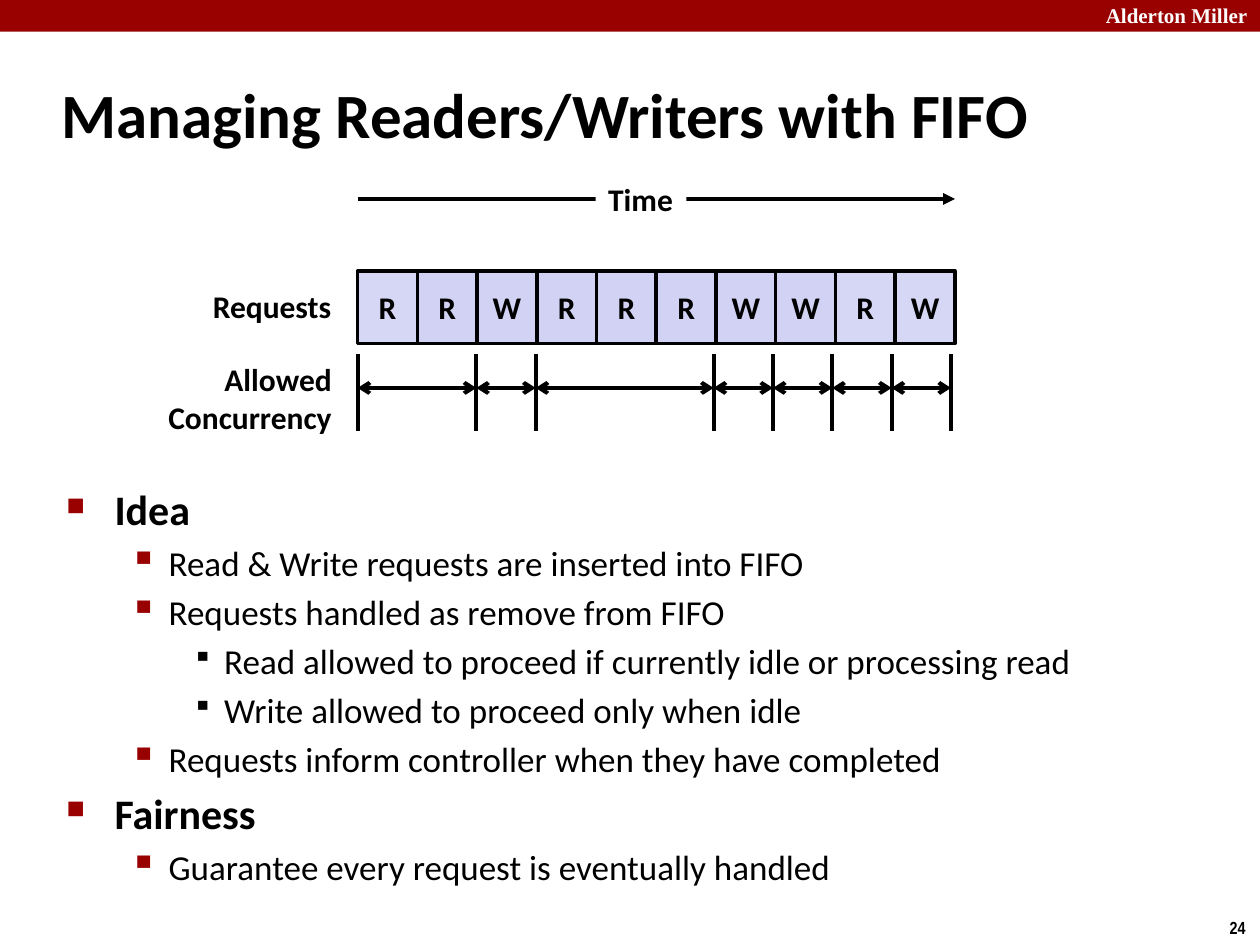
"""Build the slide on managing readers and writers with a FIFO queue."""
from lxml.etree import SubElement
from pptx import Presentation
from pptx.dml.color import RGBColor
from pptx.enum.shapes import MSO_CONNECTOR, MSO_SHAPE
from pptx.enum.text import MSO_ANCHOR, PP_ALIGN
from pptx.oxml.ns import qn
from pptx.util import Cm, Pt

BLACK = RGBColor(0x00, 0x00, 0x00)
WHITE = RGBColor(0xFF, 0xFF, 0xFF)
DARK_RED = RGBColor(0x99, 0x00, 0x00)
LAVENDER = RGBColor(0xD2, 0xD2, 0xF4)
PALE_LAVENDER = RGBColor(0xD6, 0xD6, 0xF5)

HEADER = "Alderton Miller"
TITLE = "Managing Readers/Writers with FIFO"
PAGE_NUMBER = "24"
REQUESTS = "RRWRRRWWRW"
PALE_REQUESTS = (0, 8, 9)
BODY = [
    (0, "Idea"),
    (1, "Read & Write requests are inserted into FIFO"),
    (1, "Requests handled as remove from FIFO"),
    (2, "Read allowed to proceed if currently idle or processing read"),
    (2, "Write allowed to proceed only when idle"),
    (1, "Requests inform controller when they have completed"),
    (0, "Fairness"),
    (1, "Guarantee every request is eventually handled"),
]
LEVELS = [
    dict(margin=0.97, hanging=0.97, size=24, bold=True, bullet="■", percent=60, color=DARK_RED),
    dict(margin=2.06, hanging=0.79, size=20, bold=False, bullet="▪", percent=110, color=DARK_RED),
    dict(margin=3.18, hanging=0.64, size=20, bold=False, bullet="▪", percent=80, color=BLACK),
]

ROW_LEFT, ROW_TOP, ROW_WIDTH, ROW_HEIGHT = 7.21, 5.46, 12.04, 1.47
TIME_Y = 4.01
SPAN_WIDTH, TICK_TOP, TICK_BOTTOM, SPAN_Y = 11.96, 7.14, 8.69, 7.82


def add_run(paragraph, text, size, bold=True, color=BLACK, font="Calibri"):
    run = paragraph.add_run()
    run.text = text
    run.font.name = font
    run.font.size = Pt(size)
    run.font.bold = bold
    run.font.color.rgb = color


def add_text(slide, box, lines, size, align=PP_ALIGN.LEFT, wrap=False, **style):
    shape = slide.shapes.add_textbox(*map(Cm, box))
    frame = shape.text_frame
    frame.word_wrap = wrap
    for index, line in enumerate(lines):
        paragraph = frame.add_paragraph() if index else frame.paragraphs[0]
        paragraph.alignment = align
        add_run(paragraph, line, size, **style)
    return shape


def add_rectangle(slide, box, fill, outline=None):
    shape = slide.shapes.add_shape(MSO_SHAPE.RECTANGLE, *map(Cm, box))
    shape.shadow.inherit = False
    shape.fill.solid()
    shape.fill.fore_color.rgb = fill
    if outline is None:
        shape.line.fill.background()
    else:
        shape.line.color.rgb = outline
        shape.line.width = Pt(2)
    return shape


def add_line(slide, start, end, head=None, tail=None):
    connector = slide.shapes.add_connector(MSO_CONNECTOR.STRAIGHT, *map(Cm, (*start, *end)))
    connector.line.color.rgb = BLACK
    connector.line.width = Pt(2.25)
    line = connector.line._get_or_add_ln()
    for tag, kind in (("a:headEnd", head), ("a:tailEnd", tail)):
        if kind:
            SubElement(line, qn(tag), type=kind)
    SubElement(connector._element.spPr, qn("a:effectLst"))


def add_frame(slide):
    add_rectangle(slide, (0, 0, 25.4, 0.64), DARK_RED)
    add_text(slide, (21.8, -0.08, 3.6, 0.76), [HEADER], 12, PP_ALIGN.RIGHT,
             color=WHITE, font="Times New Roman")
    add_text(slide, (24.54, 18.36, 0.86, 0.69), [PAGE_NUMBER], 10, font="Arial Narrow")
    title = add_text(slide, (0.99, 1.22, 21.08, 2.11), [TITLE], 36, wrap=True)
    title.text_frame.vertical_anchor = MSO_ANCHOR.MIDDLE


def add_body(slide):
    frame = slide.shapes.add_textbox(Cm(1.09), Cm(9.63), Cm(21.95), Cm(7.77)).text_frame
    frame.word_wrap = True
    for index, (depth, text) in enumerate(BODY):
        level = LEVELS[depth]
        paragraph = frame.add_paragraph() if index else frame.paragraphs[0]
        paragraph.level = depth
        paragraph.space_before = Pt(level["size"] * 0.2)
        properties = paragraph._p.get_or_add_pPr()
        properties.set("marL", str(Cm(level["margin"])))
        properties.set("indent", str(-Cm(level["hanging"])))
        bullet_color = SubElement(properties, qn("a:buClr"))
        SubElement(bullet_color, qn("a:srgbClr"), val=str(level["color"]))
        SubElement(properties, qn("a:buSzPct"), val=str(level["percent"] * 1000))
        SubElement(properties, qn("a:buChar"), char=level["bullet"])
        add_run(paragraph, text, level["size"], level["bold"])


def add_requests(slide):
    width = ROW_WIDTH / len(REQUESTS)
    for index, request in enumerate(REQUESTS):
        fill = PALE_LAVENDER if index in PALE_REQUESTS else LAVENDER
        box = (ROW_LEFT + index * width, ROW_TOP, width, ROW_HEIGHT)
        cell = add_rectangle(slide, box, fill, BLACK)
        frame = cell.text_frame
        frame.word_wrap = False
        frame.margin_top = frame.margin_bottom = 0
        frame.vertical_anchor = MSO_ANCHOR.MIDDLE
        frame.paragraphs[0].alignment = PP_ALIGN.CENTER
        add_run(frame.paragraphs[0], request, 18)


def add_timeline(slide):
    add_line(slide, (ROW_LEFT, TIME_Y), (ROW_LEFT + ROW_WIDTH, TIME_Y), tail="triangle")
    time = add_text(slide, (12.01, 3.51, 1.83, 1.02), ["Time"], 18)
    time.fill.solid()
    time.fill.fore_color.rgb = WHITE
    add_text(slide, (4.01, 5.66, 2.92, 1.02), ["Requests"], 18, PP_ALIGN.RIGHT)
    add_text(slide, (3.1, 7.14, 3.84, 1.8), ["Allowed", "Concurrency"], 18, PP_ALIGN.RIGHT)


def add_concurrency(slide):
    count = len(REQUESTS)
    inner = [i for i in range(1, count) if REQUESTS[i - 1:i + 1] != "RR"]
    ticks = [ROW_LEFT + i * SPAN_WIDTH / count for i in (0, *inner, count)]
    for x in ticks:
        add_line(slide, (x, TICK_TOP), (x, TICK_BOTTOM))
    for left, right in zip(ticks, ticks[1:]):
        add_line(slide, (left, SPAN_Y), (right, SPAN_Y), head="arrow", tail="arrow")


def main():
    presentation = Presentation()
    presentation.slide_width = Cm(25.4)
    presentation.slide_height = Cm(19.05)
    slide = presentation.slides.add_slide(presentation.slide_layouts[6])
    add_frame(slide)
    add_body(slide)
    add_requests(slide)
    add_timeline(slide)
    add_concurrency(slide)
    presentation.save("out.pptx")


if __name__ == "__main__":
    main()
